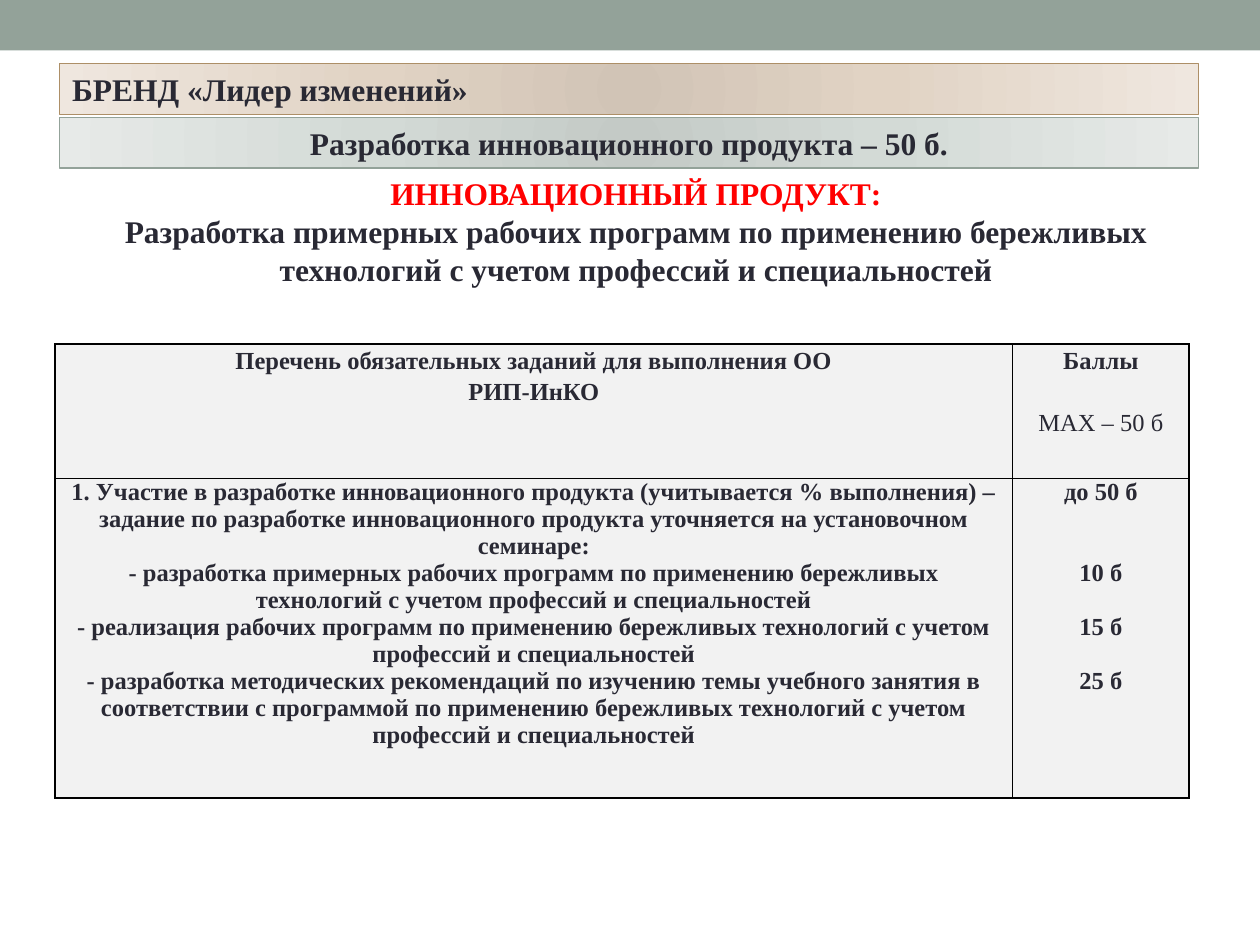
from pptx import Presentation
from pptx.dml.color import RGBColor
from pptx.enum.shapes import MSO_SHAPE
from pptx.enum.text import MSO_ANCHOR, MSO_AUTO_SIZE, PP_ALIGN
from pptx.oxml import parse_xml
from pptx.oxml.ns import nsdecls, qn
from pptx.util import Pt

INK = RGBColor(0x29, 0x29, 0x34)
RED = RGBColor(0xFF, 0x00, 0x00)
SAGE = RGBColor(0x93, 0xA2, 0x99)
SAND = RGBColor(0xAD, 0x8F, 0x67)
CELL = RGBColor(0xF2, 0xF2, 0xF2)
BLACK = RGBColor(0x00, 0x00, 0x00)
SAND_STOPS = [RGBColor(0xD1, 0xC4, 0xB6), RGBColor(0xE1, 0xD3, 0xC4), RGBColor(0xEF, 0xE7, 0xDF)]
SAGE_STOPS = [RGBColor(0xC4, 0xCA, 0xC6), RGBColor(0xD3, 0xDA, 0xD6), RGBColor(0xE7, 0xEA, 0xE8)]

PRODUCT = "азработка примерных рабочих программ по применению бережливых технологий с учетом профессий и специальностей"


class SlideBuilder:
    font = "Times New Roman"

    def __init__(self, slide):
        self.slide = slide

    def add_lines(self, tf, lines, size, align=PP_ALIGN.CENTER, spacing=None):
        """Fill a frame with (text, options) lines; options are color, bold, before."""
        for i, (text, opts) in enumerate(lines):
            p = tf.paragraphs[0] if i == 0 else tf.add_paragraph()
            p.alignment = align
            p.space_before = Pt(opts.get("before", 0))
            if spacing:
                p.line_spacing = spacing
            r = p.add_run()
            r.text = text
            r.font.name = self.font
            r.font.size = Pt(size)
            r.font.bold = opts.get("bold", True)
            r.font.color.rgb = opts.get("color", INK)

    def place(self, sp, left, top, width, height):
        sp.left, sp.top, sp.width, sp.height = Pt(left), Pt(top), Pt(width), Pt(height)

    def radial_fill(self, sp, colors):
        stops = "".join(
            f'<a:gs pos="{pos}"><a:srgbClr val="{color}"/></a:gs>'
            for pos, color in zip((0, 45000, 100000), colors))
        sp.fill.gradient()
        spPr = sp._element.spPr
        spPr.replace(spPr.find(qn("a:gradFill")), parse_xml(
            f'<a:gradFill {nsdecls("a")} rotWithShape="1"><a:gsLst>{stops}</a:gsLst>'
            '<a:path path="circle"><a:fillToRect l="100000" t="100000" r="100000" b="100000"/>'
            '</a:path></a:gradFill>'))

    def rect(self, left, top, width, height, color):
        sp = self.slide.shapes.add_shape(
            MSO_SHAPE.RECTANGLE, Pt(left), Pt(top), Pt(width), Pt(height))
        sp.shadow.inherit = False
        sp.fill.solid()
        sp.fill.fore_color.rgb = color
        sp.line.fill.background()
        return sp

    def banner(self, sp, top, text, stops, outline, align):
        self.place(sp, 34, top, 651, 29)
        self.radial_fill(sp, stops)
        sp.line.color.rgb = outline
        sp.line.width = Pt(0.75)
        tf = sp.text_frame
        tf.word_wrap = True
        tf.auto_size = MSO_AUTO_SIZE.NONE
        tf.vertical_anchor = MSO_ANCHOR.MIDDLE
        self.add_lines(tf, [(text, {})], 18, align)

    def text(self, left, top, width, height, lines, size):
        box = self.slide.shapes.add_textbox(Pt(left), Pt(top), Pt(width), Pt(height))
        box.text_frame.word_wrap = True
        self.add_lines(box.text_frame, lines, size)

    def cell_style(self, cell):
        cell.fill.solid()
        cell.fill.fore_color.rgb = CELL
        cell.margin_left = cell.margin_right = Pt(4.5)
        cell.margin_top = cell.margin_bottom = 0
        tcPr = cell._tc.get_or_add_tcPr()
        for i, side in enumerate("LRTB"):
            tcPr.insert(i, parse_xml(
                f'<a:ln{side} {nsdecls("a")} w="{int(Pt(1))}"><a:solidFill>'
                f'<a:srgbClr val="{BLACK}"/></a:solidFill></a:ln{side}>'))

    def table(self, left, top, widths, heights, rows, size):
        """Add a table whose header row has looser line spacing."""
        table = self.slide.shapes.add_table(
            len(heights), len(widths), Pt(left), Pt(top),
            Pt(sum(widths)), Pt(sum(heights))).table
        for col, width in zip(table.columns, widths):
            col.width = Pt(width)
        for i, (height, row) in enumerate(zip(heights, rows)):
            table.rows[i].height = Pt(height)
            for j, lines in enumerate(row):
                cell = table.cell(i, j)
                self.cell_style(cell)
                self.add_lines(cell.text_frame, lines, size, spacing=1.15 if i == 0 else None)


def main():
    prs = Presentation()
    prs.slide_width, prs.slide_height = Pt(720), Pt(540)
    s = prs.slides.add_slide(prs.slide_layouts[5])
    b = SlideBuilder(s)

    b.rect(0, 0, 720, 28.8, SAGE)
    b.banner(s.shapes.title, 36.3, "БРЕНД «Лидер изменений»", SAND_STOPS, SAND, PP_ALIGN.LEFT)
    b.banner(b.rect(34, 67, 651, 29, SAGE), 67, "Разработка инновационного продукта – 50 б.",
             SAGE_STOPS, SAGE, PP_ALIGN.CENTER)
    b.text(38, 96, 651, 73, [("ИННОВАЦИОННЫЙ ПРОДУКТ:", {"color": RED}), ("Р" + PRODUCT, {})], 18)

    line = 15.5
    header = [
        [("Перечень обязательных заданий для выполнения ОО", {}), ("РИП-ИнКО", {})],
        [("Баллы", {}), ("MAX – 50 б", {"bold": False, "before": 17.7})],
    ]
    tasks = [
        [("1. Участие в разработке инновационного продукта (учитывается % выполнения) – "
          "задание по разработке инновационного продукта уточняется на установочном семинаре:", {}),
         ("- р" + PRODUCT, {}),
         ("- реализация рабочих программ по применению бережливых технологий с учетом "
          "профессий и специальностей", {}),
         ("- разработка методических рекомендаций по изучению темы учебного занятия в "
          "соответствии с программой по применению бережливых технологий с учетом "
          "профессий и специальностей", {})],
        [("до 50 б", {}), ("10 б", {"before": 2 * line}),
         ("15 б", {"before": line}), ("25 б", {"before": line})],
    ]
    b.table(31.5, 196.5, [547.2, 100.8], [76.8, 182.8], [header, tasks], 14)
    prs.save("out.pptx")


if __name__ == "__main__":
    main()
